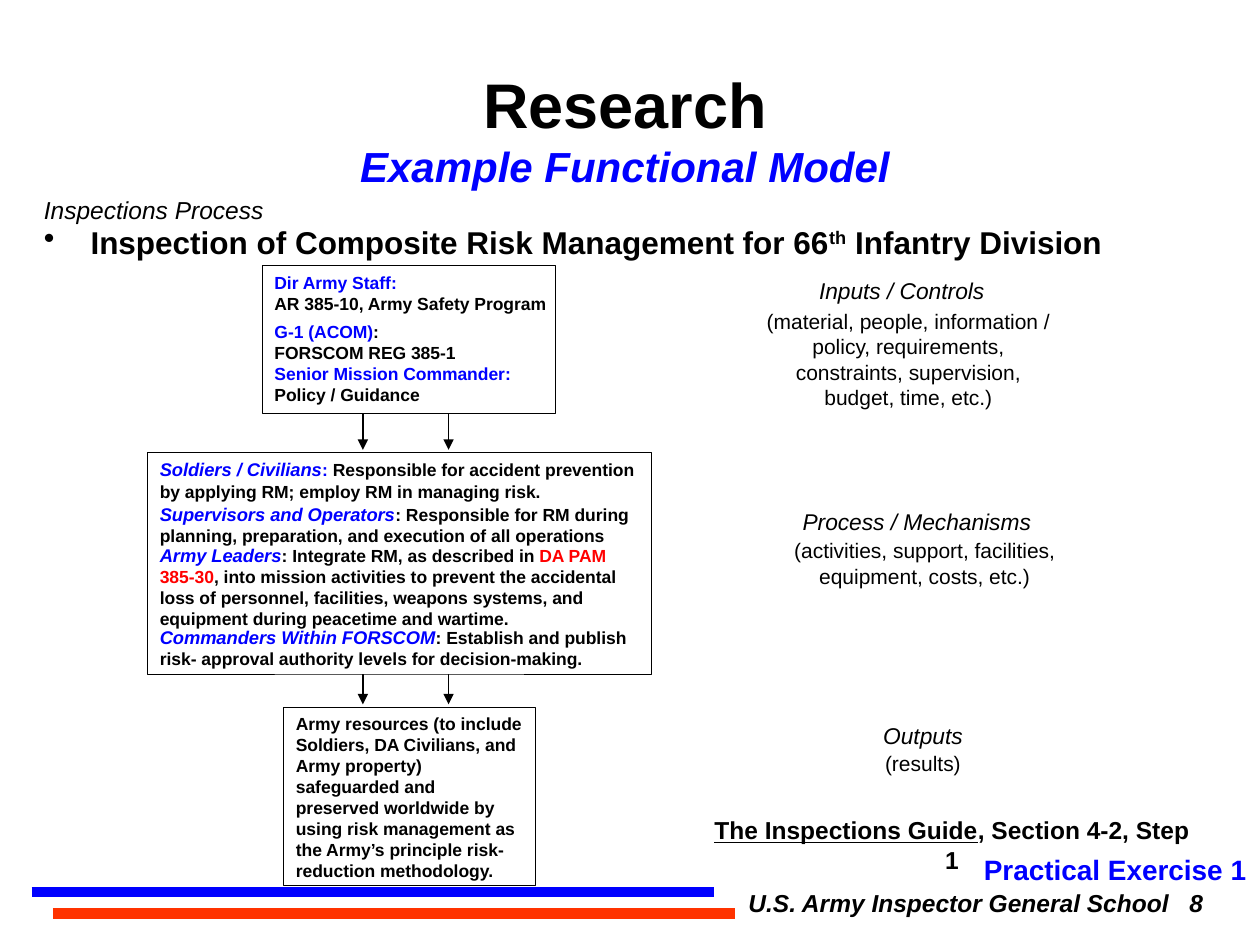
"""Build the slide showing an example functional model for an inspection."""
import dataclasses
import typing

import lxml.etree
import pptx
import pptx.dml.color
import pptx.enum.shapes
import pptx.enum.text
import pptx.oxml.ns
import pptx.util

Inches = pptx.util.Inches
qn = pptx.oxml.ns.qn
ALIGN = pptx.enum.text.PP_ALIGN


@dataclasses.dataclass(frozen=True)
class Theme:
    font: str = "Arial"
    black: str = "000000"
    white: str = "FFFFFF"
    blue: str = "0000FF"
    red: str = "FF0000"
    orange: str = "FF3300"
    title: float = 36
    subtitle: float = 24
    heading: float = 18
    exercise: float = 16
    label: float = 14
    stage: float = 13
    detail: float = 12
    role: float = 10.5
    body: float = 10


THEME = Theme()


class Span(typing.NamedTuple):
    text: str
    size: float = THEME.body
    color: str = THEME.black
    bold: bool = True
    italic: bool = False
    underline: bool = False
    raised: bool = False


class Area(typing.NamedTuple):
    left: float
    top: float
    width: float
    height: float

    def lengths(self) -> list:
        return [Inches(value) for value in self]


class Duty(typing.NamedTuple):
    top: float
    height: float
    role: str
    spans: list


class Stage(typing.NamedTuple):
    name: str
    name_area: Area
    detail: list
    detail_area: Area
    align: typing.Any = ALIGN.LEFT


def rgb(color: str):
    return pptx.dml.color.RGBColor.from_string(color)


def add_text(page, area: Area, paras: list, *, align=ALIGN.LEFT, wrap=True,
             inset=True, bullet=None, left_inset=None, tab=None):
    box = page.shapes.add_textbox(*area.lengths())
    frame = box.text_frame
    frame.word_wrap = wrap
    if not inset:
        frame.margin_left = frame.margin_right = 0
        frame.margin_top = frame.margin_bottom = 0
    if left_inset is not None:
        frame.margin_left = Inches(left_inset)
    for index, spans in enumerate(paras):
        para = frame.paragraphs[0] if index == 0 else frame.add_paragraph()
        para.alignment = align
        properties = para._p.get_or_add_pPr()
        if bullet is not None:
            properties.set("marL", str(Inches(bullet)))
            properties.set("indent", str(-Inches(bullet)))
            lxml.etree.SubElement(properties, qn("a:buChar"), char="•")
        if tab is not None:
            tabs = lxml.etree.SubElement(properties, qn("a:tabLst"))
            lxml.etree.SubElement(tabs, qn("a:tab"), pos=str(Inches(tab)), algn="l")
        for span in spans:
            run = para.add_run()
            run.text = span.text
            font = run.font
            font.name, font.size = THEME.font, pptx.util.Pt(span.size)
            font.bold, font.italic = span.bold, span.italic
            font.underline = span.underline
            font.color.rgb = rgb(span.color)
            if span.raised:
                run._r.get_or_add_rPr().set("baseline", "30000")
    return box


def add_line(page, start: tuple, end: tuple, color: str, width: float, arrow=False):
    line = page.shapes.add_connector(
        pptx.enum.shapes.MSO_CONNECTOR.STRAIGHT,
        *[Inches(value) for value in (*start, *end)])
    line.line.color.rgb = rgb(color)
    line.line.width = pptx.util.Pt(width)
    if arrow:
        lxml.etree.SubElement(line.line._get_or_add_ln(), qn("a:tailEnd"),
                              type="triangle", w="med", len="med")
    lxml.etree.SubElement(line._element.spPr, qn("a:effectLst"))


def add_frame(page, area: Area):
    frame = page.shapes.add_shape(
        pptx.enum.shapes.MSO_SHAPE.RECTANGLE, *area.lengths())
    frame.shadow.inherit = False
    frame.fill.solid()
    frame.fill.fore_color.rgb = rgb(THEME.white)
    frame.line.color.rgb = rgb(THEME.black)
    frame.line.width = pptx.util.Pt(0.38)


def add_header_and_footer(page):
    add_line(page, (0.25, 7.08), (5.67, 7.08), THEME.blue, 6)
    add_line(page, (0.42, 7.25), (5.83, 7.25), THEME.orange, 6)
    add_text(page, Area(0.25, 1.5, 4.5, 0.5),
             [[Span("Inspections Process", THEME.label, bold=False, italic=True)]])
    add_text(page, Area(5.5, 7, 4.5, 0.5),
             [[Span("U.S. Army Inspector General School\t8", THEME.label, italic=True)]],
             left_inset=0.44, tab=3.5)
    add_text(page, Area(2.74, 0.47, 4.44, 1.1), [
        [Span("Research", THEME.title)],
        [Span("Example Functional Model", THEME.subtitle, THEME.blue, italic=True)],
    ], align=ALIGN.CENTER, wrap=False)
    add_text(page, Area(0.25, 1.72, 9.75, 0.4), [[
        Span("Inspection of Composite Risk Management for 66", THEME.heading),
        Span("th", THEME.heading, raised=True),
        Span(" Infantry Division", THEME.heading),
    ]], bullet=0.37)
    add_text(page, Area(5.5, 6.42, 4.11, 0.57), [[
        Span("The Inspections Guide", THEME.label, underline=True),
        Span(", Section 4-2, Step 1", THEME.label),
    ]], align=ALIGN.CENTER)
    add_text(page, Area(7.71, 6.72, 2.29, 0.37),
             [[Span("Practical Exercise 1", THEME.exercise, THEME.blue)]], wrap=False)


def add_model(page):
    inputs, process, outputs = (Area(2.08, 2.11, 2.33, 1.17),
                                Area(1.17, 3.59, 4, 1.76), Area(2.25, 5.61, 2, 1.42))
    for top in (3.2, 5.22):
        for x in (2.88, 3.56):
            add_line(page, (x, top), (x, top + 0.37), THEME.black, 1, arrow=True)
    for area in (inputs, process, outputs):
        add_frame(page, area)

    sources = [
        (2.11, 2.67, [Span("Dir Army Staff:", color=THEME.blue)],
         "AR 385-10, Army Safety Program"),
        (2.5, 2.25, [Span("G-1 (ACOM)", color=THEME.blue), Span(":")],
         "FORSCOM REG 385-1"),
        (2.83, 2.25, [Span("Senior Mission Commander:", color=THEME.blue)],
         "Policy / Guidance"),
    ]
    for top, width, source, document in sources:
        add_text(page, Area(inputs.left, top, width, 0.44), [source, [Span(document)]])

    duties = [
        Duty(3.59, 0.45, "Soldiers / Civilians", [
            Span(": ", color=THEME.blue),
            Span("Responsible for accident prevention by applying RM; "
                 "employ RM in managing risk.")]),
        Duty(3.94, 0.45, "Supervisors and Operators", [
            Span(": Responsible for RM during planning, preparation, "
                 "and execution of all operations")]),
        Duty(4.27, 0.78, "Army Leaders", [
            Span(": Integrate RM, as described in "),
            Span("DA PAM 385-30", color=THEME.red),
            Span(", into mission activities to prevent the accidental loss of "
                 "personnel, facilities, weapons systems, and equipment during "
                 "peacetime and wartime.")]),
        Duty(4.92, 0.45, "Commanders Within FORSCOM", [
            Span(": Establish and publish risk- approval authority levels "
                 "for decision-making.")]),
    ]
    for duty in duties:
        role = Span(duty.role, THEME.role, THEME.blue, italic=True)
        add_text(page, Area(process.left, duty.top, process.width, duty.height),
                 [[role, *duty.spans]])
    add_text(page, outputs, [[Span(
        "Army resources (to include Soldiers, DA Civilians, and Army property) "
        "safeguarded and preserved worldwide by using risk management as the "
        "Army’s principle risk- reduction methodology.")]])


def add_stages(page):
    stages = [
        Stage("Inputs / Controls", Area(6.5, 2.2, 1.45, 0.22),
              ["(material, people, information / policy, requirements,",
               "constraints, supervision,", "budget, time, etc.)"],
              Area(5.92, 2.45, 2.58, 0.81)),
        Stage("Process / Mechanisms", Area(6.37, 4.03, 1.96, 0.22),
              ["(activities, support, facilities, equipment, costs, etc.)"],
              Area(5.93, 4.27, 2.82, 0.4)),
        Stage("Outputs", Area(6.4, 5.73, 1.85, 0.22), ["(results)"],
              Area(6.4, 5.96, 1.85, 0.21), ALIGN.CENTER),
    ]
    for stage in stages:
        add_text(page, stage.name_area,
                 [[Span(stage.name, THEME.stage, bold=False, italic=True)]],
                 align=stage.align, inset=False)
        add_text(page, stage.detail_area,
                 [[Span(line, THEME.detail, bold=False)] for line in stage.detail],
                 align=ALIGN.CENTER, inset=False)


def main():
    deck = pptx.Presentation()
    deck.slide_width, deck.slide_height = Inches(10), Inches(7.5)
    page = deck.slides.add_slide(deck.slide_layouts[6])
    add_header_and_footer(page)
    add_model(page)
    add_stages(page)
    deck.save("out.pptx")


if __name__ == "__main__":
    main()
